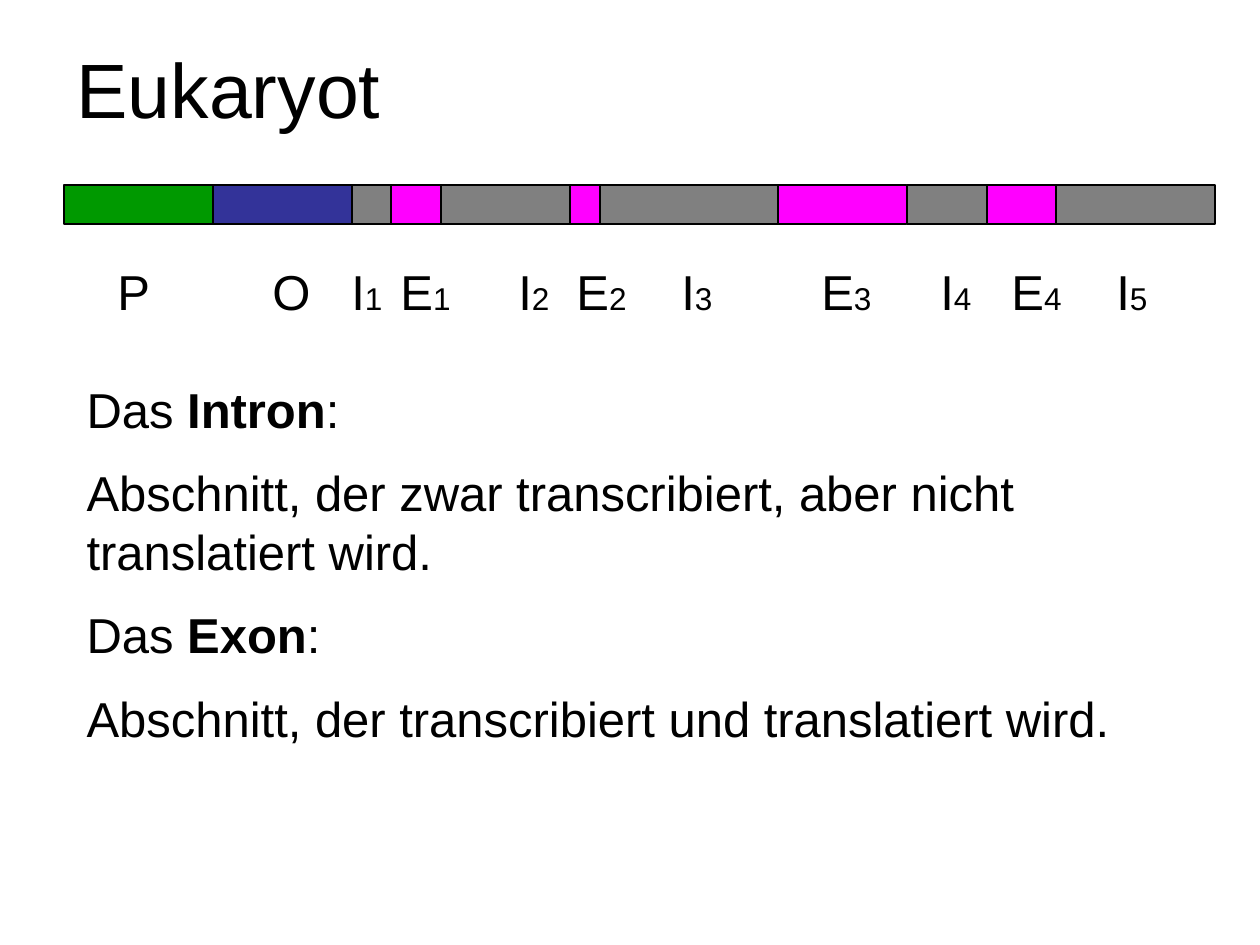
"""Build a slide on introns and exons in a eukaryotic gene."""
from itertools import accumulate

from lxml import etree
from pptx import Presentation
from pptx import util as u
from pptx.dml.color import RGBColor
from pptx.enum import shapes, text
from pptx.oxml.ns import qn

PX = u.Inches(1) // 126
THEME = {
    "font": "Arial", "text": "000000", "outline": "000000",
    "promoter": "009900", "operator": "333399", "intron": "808080", "exon": "FF00FF",
    "title": 44, "body": 28, "index": 18, "gap": 14, "outline_width": 0.75,
}
TITLE = "Eukaryot"
SEGMENTS = [
    ("promoter", 149), ("operator", 139), ("intron", 39), ("exon", 50),
    ("intron", 129), ("exon", 30), ("intron", 178), ("exon", 129),
    ("intron", 80), ("exon", 69), ("intron", 159),
]
LABELS = [
    ("P", "", 0), ("O", "", 155), ("I", "1", 234), ("E", "1", 283),
    ("I", "2", 401), ("E", "2", 459), ("I", "3", 564), ("E", "3", 704),
    ("I", "4", 823), ("E", "4", 894), ("I", "5", 999),
]
DEFINITIONS = [
    [("Das ", False), ("Intron", True), (":", False)],
    [("Abschnitt, der zwar transcribiert, aber nicht translatiert wird.", False)],
    [("Das ", False), ("Exon", True), (":", False)],
    [("Abschnitt, der transcribiert und translatiert wird.", False)],
]
BAR_LEFT, BAR_TOP, BAR_HEIGHT = 64, 185, 39


def color(name):
    return RGBColor.from_string(THEME[name])


def place(shape, *box):
    shape.left, shape.top, shape.width, shape.height = (n * PX for n in box)


def prepare(frame):
    frame.word_wrap = True
    frame.auto_size = text.MSO_AUTO_SIZE.NONE
    frame.vertical_anchor = text.MSO_ANCHOR.TOP


def style(paragraph, size):
    paragraph.alignment = text.PP_ALIGN.LEFT
    paragraph.space_before = u.Pt(0)
    paragraph.font.name = THEME["font"]
    paragraph.font.size = u.Pt(THEME[size])
    paragraph.font.color.rgb = color("text")


def add_title(slide):
    title = slide.shapes.title
    place(title, 64, 35, 625, 105)
    prepare(title.text_frame)
    title.text_frame.text = TITLE
    style(title.text_frame.paragraphs[0], "title")


def add_gene(slide):
    lefts = accumulate((width for _, width in SEGMENTS), initial=BAR_LEFT)
    for (kind, width), left in zip(SEGMENTS, lefts):
        box = (n * PX for n in (left, BAR_TOP, width, BAR_HEIGHT))
        segment = slide.shapes.add_shape(shapes.MSO_SHAPE.RECTANGLE, *box)
        segment.shadow.inherit = False
        segment.fill.solid()
        segment.fill.fore_color.rgb = color(kind)
        segment.line.color.rgb = color("outline")
        segment.line.width = u.Pt(THEME["outline_width"])


def add_labels(slide):
    box = slide.shapes.add_textbox(*(n * PX for n in (105, 255, 1111, 72)))
    prepare(box.text_frame)
    paragraph = box.text_frame.paragraphs[0]
    style(paragraph, "body")
    properties = paragraph._p.get_or_add_pPr()
    stops = etree.Element(qn("a:tabLst"))
    properties.insert_element_before(stops, "a:defRPr", "a:extLst")
    for letter, index, offset in LABELS:
        if offset:
            etree.SubElement(stops, qn("a:tab"), pos=str(offset * PX), algn="l")
        paragraph.add_run().text = "\t" + letter if offset else letter
        if index:
            run = paragraph.add_run()
            run.text = index
            run.font.size = u.Pt(THEME["index"])


def add_definitions(slide):
    body = slide.placeholders[1]
    place(body, 74, 373, 1101, 396)
    frame = body.text_frame
    prepare(frame)
    for number, parts in enumerate(DEFINITIONS):
        paragraph = frame.add_paragraph() if number else frame.paragraphs[0]
        style(paragraph, "body")
        paragraph.space_after = u.Pt(THEME["gap"])
        properties = paragraph._p.get_or_add_pPr()
        properties.set("marL", "0")
        properties.set("indent", "0")
        properties.insert_element_before(
            etree.Element(qn("a:buNone")), "a:tabLst", "a:defRPr", "a:extLst")
        for words, bold in parts:
            run = paragraph.add_run()
            run.text = words
            run.font.bold = bold


def main():
    presentation = Presentation()
    presentation.slide_width, presentation.slide_height = u.Inches(10), u.Inches(7.5)
    slide = presentation.slides.add_slide(presentation.slide_layouts[1])
    add_title(slide)
    add_gene(slide)
    add_labels(slide)
    add_definitions(slide)
    presentation.save("out.pptx")


if __name__ == "__main__":
    main()
